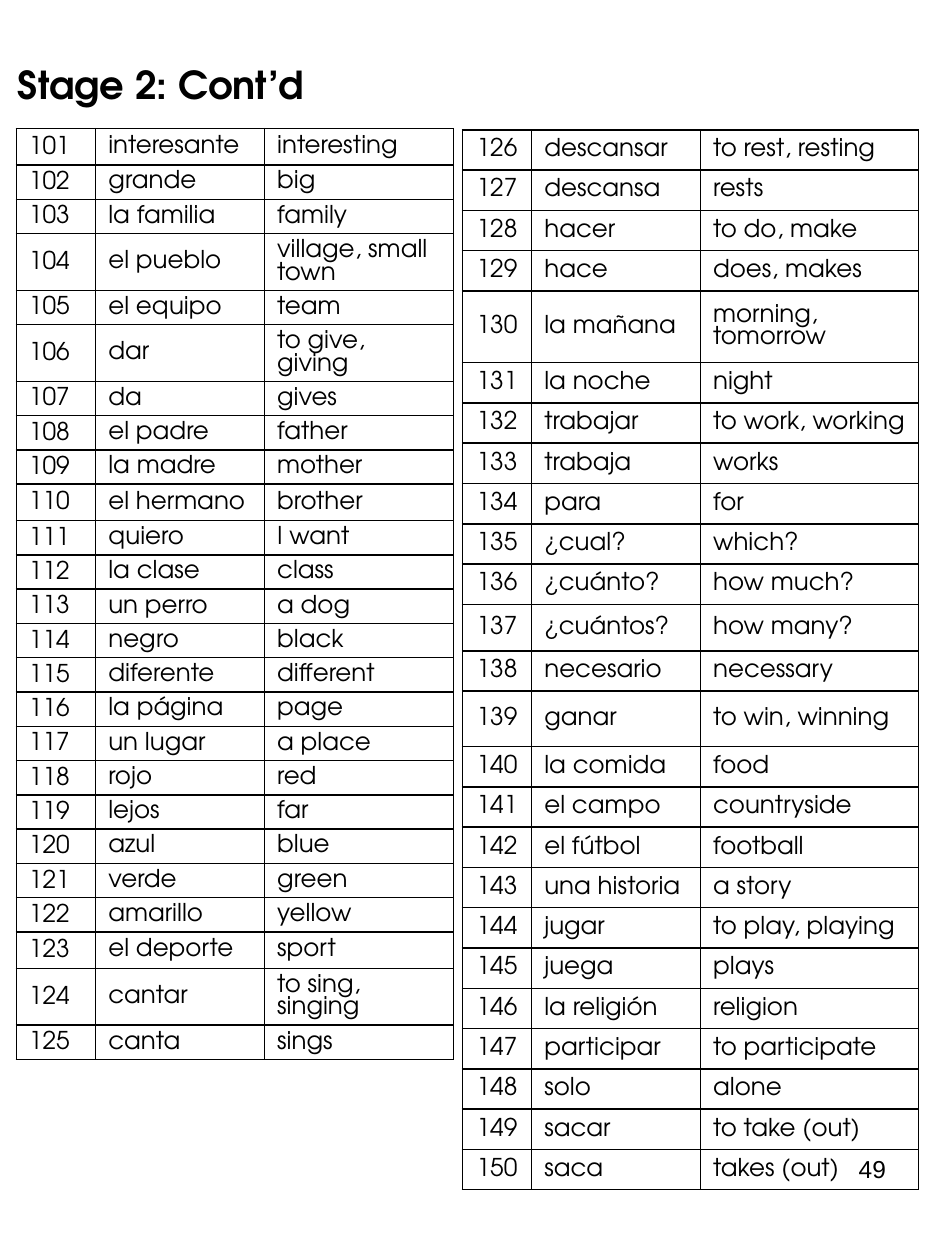
import dataclasses
import typing

import pptx
import pptx.dml.color
import pptx.enum.text
import pptx.oxml
import pptx.oxml.ns
import pptx.util

Inches = pptx.util.Inches
Align = pptx.enum.text.PP_ALIGN
Anchor = pptx.enum.text.MSO_ANCHOR


@dataclasses.dataclass(frozen=True)
class Theme:
    ink: str = "000000"
    paper: str = "FFFFFF"
    display_font: str = "TeX Gyre Adventor"
    number_font: str = "Arial"
    title_size: int = 22
    body_size: int = 14
    border_width: int = 1


THEME = Theme()


@dataclasses.dataclass(frozen=True)
class WordList:
    first_number: int
    left: float
    top: float
    column_widths: tuple[float, ...]
    row_height: float
    special_heights: dict[int, float]
    number_align: Align
    number_spacing: float
    words: tuple[tuple[str, str], ...]


@dataclasses.dataclass(frozen=True)
class Label:
    text: str
    box: tuple[float, float, float, float]
    font: str
    size: int
    bold: bool
    align: Align
    anchor: Anchor


LEFT_WORDS = (
    ("interesante", "interesting"), ("grande", "big"), ("la familia", "family"),
    ("el pueblo", "village, small town"), ("el equipo", "team"),
    ("dar", "to give, giving"), ("da", "gives"), ("el padre", "father"),
    ("la madre", "mother"), ("el hermano", "brother"), ("quiero", "I want"),
    ("la clase", "class"), ("un perro", "a dog"), ("negro", "black"),
    ("diferente", "different"), ("la página", "page"), ("un lugar", "a place"),
    ("rojo", "red"), ("lejos", "far"), ("azul", "blue"), ("verde", "green"),
    ("amarillo", "yellow"), ("el deporte", "sport"),
    ("cantar", "to sing, singing"), ("canta", "sings"),
)

RIGHT_WORDS = (
    ("descansar", "to rest, resting"), ("descansa", "rests"),
    ("hacer", "to do, make"), ("hace", "does, makes"),
    ("la mañana", "morning, tomorrow"), ("la noche", "night"),
    ("trabajar", "to work, working"), ("trabaja", "works"), ("para", "for"),
    ("¿cual?", "which?"), ("¿cuánto?", "how much?"), ("¿cuántos?", "how many?"),
    ("necesario", "necessary"), ("ganar", "to win, winning"),
    ("la comida", "food"), ("el campo", "countryside"),
    ("el fútbol", "football"), ("una historia", "a story"),
    ("jugar", "to play, playing"), ("juega", "plays"),
    ("la religión", "religion"), ("participar", "to participate"),
    ("solo", "alone"), ("sacar", "to take (out)"), ("saca", "takes (out)"),
)

WORD_LISTS = (
    WordList(101, 0.13, 1.02, (0.63, 1.34, 1.5), 0.26,
             {101: 0.29, 104: 0.45, 106: 0.45, 110: 0.29, 123: 0.29, 124: 0.45},
             Align.LEFT, 1.07, LEFT_WORDS),
    WordList(126, 3.67, 1.03, (0.55, 1.34, 1.73), 0.32,
             {130: 0.57, 137: 0.37, 139: 0.44},
             Align.CENTER, 1.0, RIGHT_WORDS),
)

TITLE = Label("Stage 2: Cont’d", (-0.1, 0.42, 2.75, 0.5), THEME.display_font,
              THEME.title_size, True, Align.CENTER, Anchor.MIDDLE)
PAGE_NUMBER = Label("49", (5.38, 9.11, 1.75, 0.69), THEME.number_font,
                    THEME.body_size, False, Align.RIGHT, Anchor.TOP)


def write(paragraph: typing.Any, text: str, font: str, size: int,
          bold: bool = False) -> None:
    run = paragraph.add_run()
    run.text = text
    run.font.name = font
    run.font.size = pptx.util.Pt(size)
    run.font.bold = bold
    run.font.color.rgb = pptx.dml.color.RGBColor.from_string(THEME.ink)


def add_borders(cell: typing.Any) -> None:
    properties = cell._tc.get_or_add_tcPr()
    for position, side in enumerate(("lnL", "lnR", "lnT", "lnB")):
        border = pptx.oxml.parse_xml(
            f'<a:{side} {pptx.oxml.ns.nsdecls("a")} '
            f'w="{pptx.util.Pt(THEME.border_width)}"><a:solidFill>'
            f'<a:srgbClr val="{THEME.ink}"/></a:solidFill></a:{side}>')
        properties.insert(position, border)


def fill_cell(cell: typing.Any, text: str, align: Align, spacing: float) -> None:
    cell.fill.background()
    add_borders(cell)
    cell.vertical_anchor = Anchor.MIDDLE
    cell.margin_left = cell.margin_right = Inches(0.1)
    cell.margin_top = cell.margin_bottom = Inches(0.04)
    paragraph = cell.text_frame.paragraphs[0]
    paragraph.alignment = align
    paragraph.line_spacing = spacing
    write(paragraph, text, THEME.display_font, THEME.body_size)


def draw_word_list(slide: typing.Any, words: WordList) -> None:
    numbers = range(words.first_number, words.first_number + len(words.words))
    heights = [words.special_heights.get(n, words.row_height) for n in numbers]
    table = slide.shapes.add_table(
        len(heights), len(words.column_widths), Inches(words.left),
        Inches(words.top), Inches(sum(words.column_widths)),
        Inches(sum(heights))).table
    table.first_row = False
    table.horz_banding = False
    for column, width in zip(table.columns, words.column_widths):
        column.width = Inches(width)
    for row, height, number, (spanish, english) in zip(
            table.rows, heights, numbers, words.words):
        row.height = Inches(height)
        number_cell, spanish_cell, english_cell = row.cells
        fill_cell(number_cell, str(number), words.number_align,
                  words.number_spacing)
        fill_cell(spanish_cell, spanish, Align.LEFT, 1.0)
        fill_cell(english_cell, english, Align.LEFT, 1.0)


def draw_label(slide: typing.Any, label: Label) -> None:
    frame = slide.shapes.add_textbox(*map(Inches, label.box)).text_frame
    frame.word_wrap = True
    frame.vertical_anchor = label.anchor
    paragraph = frame.paragraphs[0]
    paragraph.alignment = label.align
    write(paragraph, label.text, label.font, label.size, label.bold)


def main() -> None:
    deck = pptx.Presentation()
    deck.slide_width = Inches(7.5)
    deck.slide_height = Inches(10)
    slide = deck.slides.add_slide(deck.slide_layouts[6])
    slide.background.fill.solid()
    slide.background.fill.fore_color.rgb = (
        pptx.dml.color.RGBColor.from_string(THEME.paper))
    for words in WORD_LISTS:
        draw_word_list(slide, words)
    draw_label(slide, TITLE)
    draw_label(slide, PAGE_NUMBER)
    deck.save("out.pptx")


if __name__ == "__main__":
    main()
